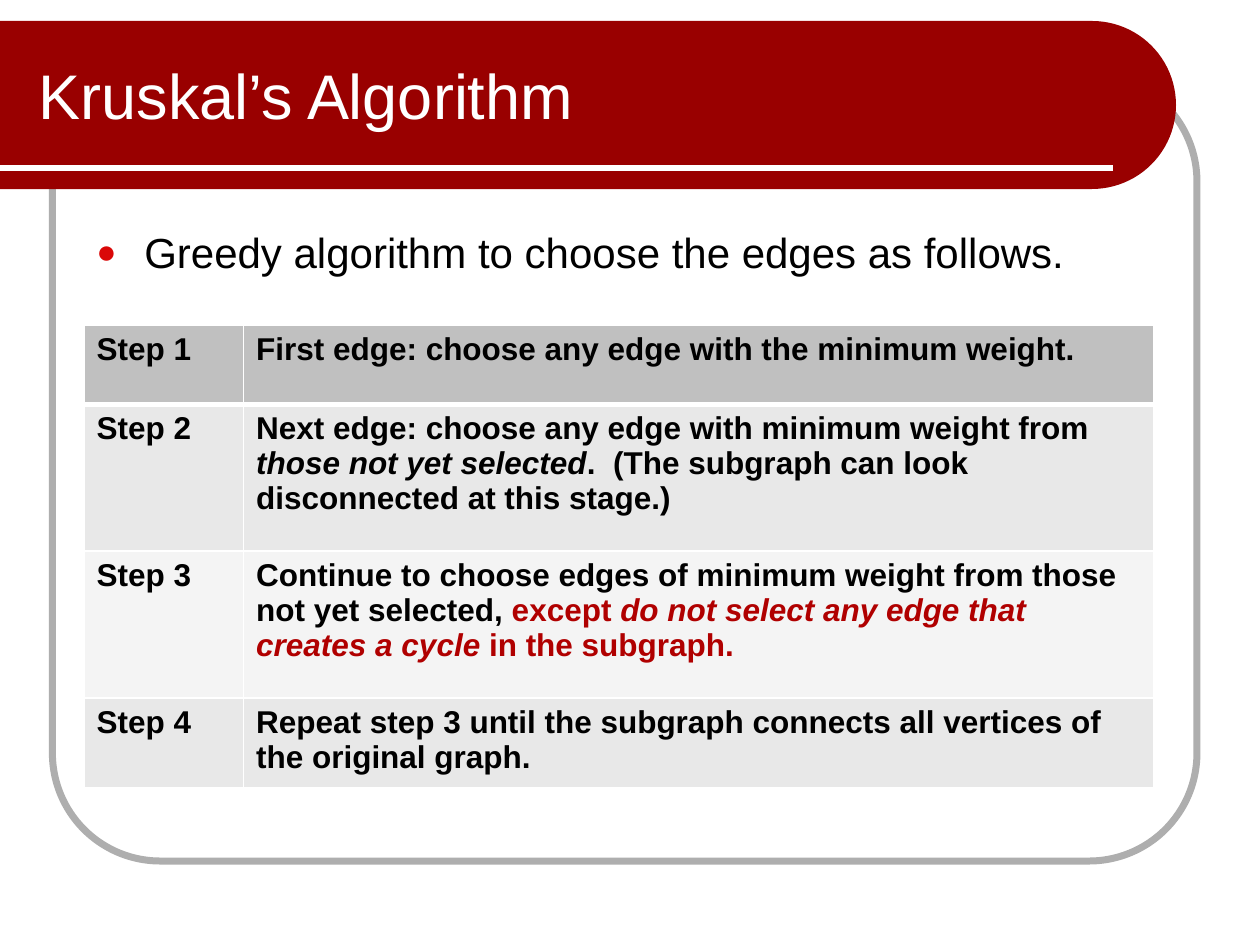
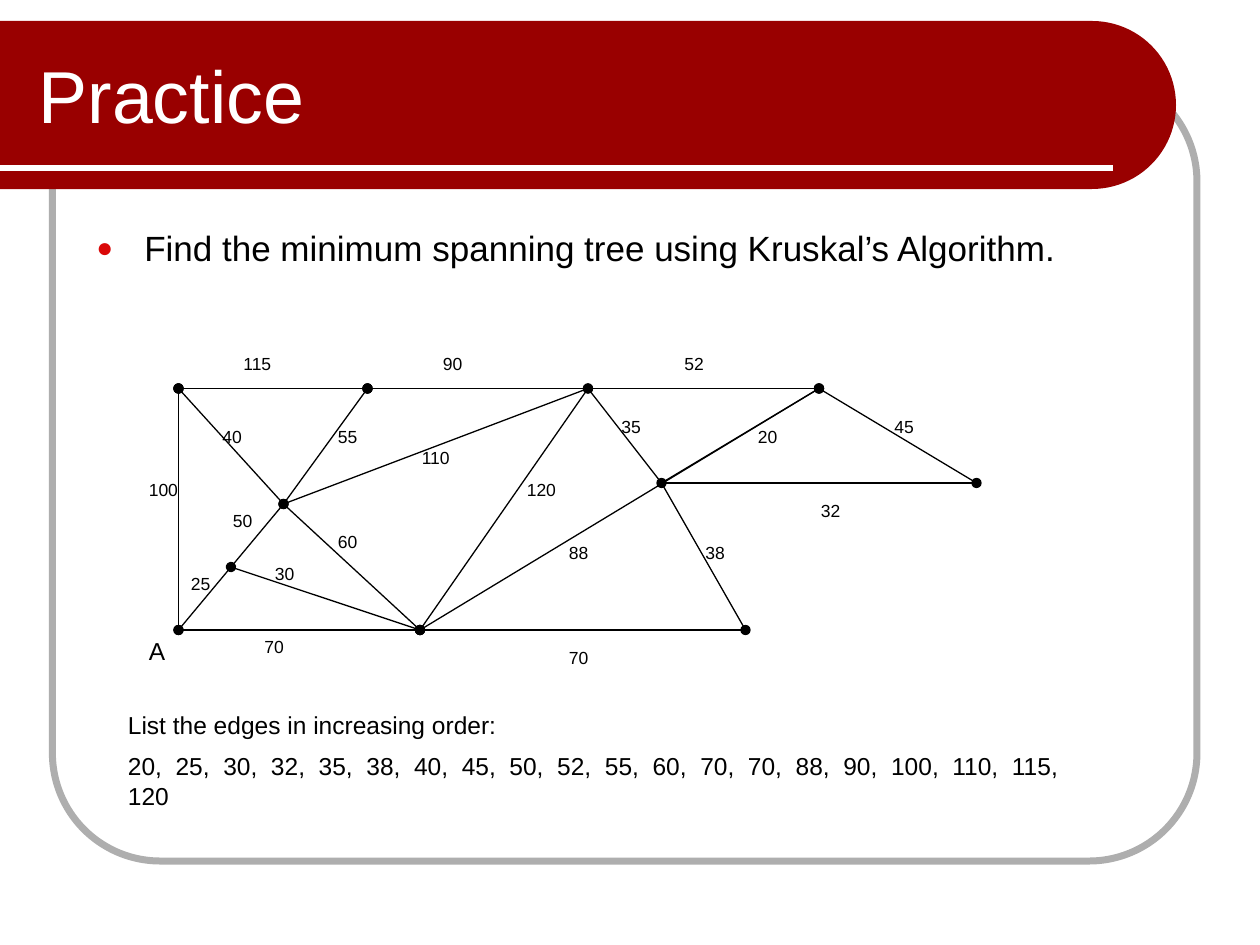
from math import cos, pi, sin

from lxml import etree
from pptx import Presentation
from pptx.dml.color import RGBColor
from pptx.enum.shapes import MSO_CONNECTOR, MSO_SHAPE
from pptx.enum.text import MSO_ANCHOR
from pptx.oxml.ns import qn
from pptx.util import Inches, Pt

STRAIGHT = MSO_CONNECTOR.STRAIGHT
ROUNDED = MSO_SHAPE.ROUNDED_RECTANGLE
MIDDLE, TOP = MSO_ANCHOR.MIDDLE, MSO_ANCHOR.TOP

FONT = "Arial"
COLORS = {
    "band": "990000", "frame": "AEAEAE", "bullet": "DA0808",
    "warning": "B00000", "ink": "000000", "paper": "FFFFFF",
    "first_row": "C0C0C0", "even_row": "E8E8E8", "odd_row": "F4F4F4",
}

# The slide is a grid of 120 columns by 90 rows; boxes are (left, top, width, height)
COLUMNS, ROWS = 120, 90
CELL = Inches(10) // COLUMNS
SLIDE_BOX = (0, 0, COLUMNS, ROWS)
TITLE_BOX = (2.5, 3, 93.5, 12)
BODY_BOX = (8, 21, 104, 58)
STEPS_BOX = (8, 31, 101.9, 44)
GRAPH_BOX = (13, 33, 80, 32)
ORDER_BOX = (11, 67, 92, 8.2)

# Each step is a list of (text, italic, colour)
STEPS = [
    [("First edge: choose any edge with the minimum weight.", False, "ink")],
    [("Next edge: choose any edge with minimum weight from ", False, "ink"),
     ("those not yet selected", True, "ink"),
     (".  (The subgraph can look disconnected at this stage.)", False, "ink")],
    [("Continue to choose edges of minimum weight from those not yet selected, ",
      False, "ink"),
     ("except ", False, "warning"),
     ("do not select any edge that creates a cycle", True, "warning"),
     (" in the subgraph.", False, "warning")],
    [("Repeat step 3 until the subgraph connects all vertices of the original graph.",
      False, "ink")],
]
STEP_FILLS = ["first_row", "even_row", "odd_row", "even_row"]
STEP_ROWS = [7.5, 14, 14, 8.5]
STEP_COLUMNS = [15.2, 86.7]

# Vertices within the graph box
VERTICES = {
    "A": (4, 27), "B": (4, 4), "C": (22, 4), "D": (43, 4), "E": (65, 4),
    "F": (80, 13), "G": (14, 15), "H": (9, 21), "I": (27, 27),
    "J": (50, 13), "K": (58, 27),
}
# Edge, weight, place and width of the weight, dots at the ends
EDGES = [
    ("AB", 100, (0, 12, 6), True), ("BC", 115, (9, 0, 6), True),
    ("CD", 90, (28, 0, 7), True), ("DE", 52, (51, 0, 7), True),
    ("EF", 45, (71, 6, 5), True), ("GB", 40, (7, 7, 5), True),
    ("GC", 55, (18, 7, 5), True), ("GD", 110, (26, 9, 6.7), False),
    ("AI", 70, (11, 27, 5), True), ("IK", 70, (40, 28, 5), True),
    ("GI", 60, (18, 17, 5), False), ("IH", 30, (12, 20, 5), True),
    ("DI", 120, (36, 12, 7), False), ("EI", 88, (40, 18, 5), False),
    ("EJ", 20, (58, 7, 5), True), ("DJ", 35, (45, 6, 5), False),
    ("JF", 32, (64, 14, 5), False), ("JK", 38, (53, 18, 5), False),
    ("AH", 25, (4, 21, 5), False), ("HG", 50, (8, 15, 5), False),
]


def grid(*cells):
    return [round(cell * CELL) for cell in cells]


def within(box, left, top, *size):
    return (box[0] + left, box[1] + top, *size)


def rgb(color):
    return RGBColor.from_string(COLORS[color])


def style(run, size, color="ink", bold=False, italic=False):
    run.font.name, run.font.size = FONT, Pt(size)
    run.font.color.rgb = rgb(color)
    run.font.bold, run.font.italic = bold, italic


def add_text(slide, box, lines, size, color="ink", anchor=TOP, gap=0):
    frame = slide.shapes.add_textbox(*grid(*box)).text_frame
    frame.word_wrap, frame.vertical_anchor = True, anchor
    frame.text = lines
    for order, paragraph in enumerate(frame.paragraphs):
        paragraph.space_before = Pt(gap if order else 0)
        for run in paragraph.runs:
            style(run, size, color)
    return frame


def add_line(slide, start, end, color, width, dots=False):
    line = slide.shapes.add_connector(STRAIGHT, *grid(*start, *end))
    line.line.color.rgb, line.line.width = rgb(color), Pt(width)
    properties = line._element.spPr
    if dots:
        outline = properties.find(qn("a:ln"))
        for tip in ("a:headEnd", "a:tailEnd"):
            etree.SubElement(outline, qn(tip), type="oval")
    etree.SubElement(properties, qn("a:effectLst"))


def add_backdrop(slide, box):
    # Rounded frame
    frame = slide.shapes.add_shape(ROUNDED, *grid(*within(box, 5, 7, 109, 75)))
    frame.adjustments[0] = 0.137
    frame.shadow.inherit = False
    frame.fill.background()
    frame.line.color.rgb, frame.line.width = rgb("frame"), Pt(4)

    # Title band with a half-round right end
    radius, arc_steps = 8, 48
    center_x, center_y = within(box, 104, 10)
    angles = [pi * (step / arc_steps - 0.5) for step in range(arc_steps + 1)]
    outline = [grid(center_x + radius * cos(angle), center_y + radius * sin(angle))
               for angle in angles]
    outline.append(grid(box[0], center_y + radius))
    pen = slide.shapes.build_freeform(*grid(box[0], center_y - radius))
    pen.add_line_segments(outline, close=True)
    band = pen.convert_to_shape()
    band.shadow.inherit = False
    band.fill.solid()
    band.fill.fore_color.rgb = rgb("band")
    band.line.fill.background()

    # Rule under the title
    add_line(slide, within(box, 0, 16), within(box, 106, 16), "paper", 3)


def add_bullet(slide, box, text, size):
    frame = add_text(slide, box, text, size)
    properties = frame.paragraphs[0]._p.get_or_add_pPr()
    properties.set("marL", str(Inches(0.38)))
    properties.set("indent", str(-Inches(0.38)))
    bullet_color = etree.SubElement(properties, qn("a:buClr"))
    etree.SubElement(bullet_color, qn("a:srgbClr"), val=COLORS["bullet"])
    etree.SubElement(properties, qn("a:buSzPct"), val="80000")
    etree.SubElement(properties, qn("a:buFont"), typeface=FONT)
    etree.SubElement(properties, qn("a:buChar"), char="●")


def start_slide(deck, title, title_size, task, task_size):
    slide = deck.slides.add_slide(deck.slide_layouts[6])
    add_backdrop(slide, SLIDE_BOX)
    add_text(slide, TITLE_BOX, title, title_size, "paper", MIDDLE)
    add_bullet(slide, BODY_BOX, task, task_size)
    return slide


def set_borders(cell, **widths):
    properties = cell._tc.get_or_add_tcPr()
    for side in "LRTB":
        border = etree.SubElement(properties, qn(f"a:ln{side}"),
                                  w=str(Pt(widths.get(side, 1))))
        fill = etree.SubElement(border, qn("a:solidFill"))
        etree.SubElement(fill, qn("a:srgbClr"), val=COLORS["paper"])


def add_steps(slide, box):
    table = slide.shapes.add_table(len(STEPS), 2, *grid(*box)).table
    for column, width in zip(table.columns, grid(*STEP_COLUMNS)):
        column.width = width
    for row, height in zip(table.rows, grid(*STEP_ROWS)):
        row.height = height
    for index, step in enumerate(STEPS):
        name = [(f"Step {index + 1}", False, "ink")]
        for cell, parts in zip(table.rows[index].cells, (name, step)):
            # The first row is set off by a thicker rule
            set_borders(cell, B=3 if index == 0 else 1, T=3 if index == 1 else 1)
            cell.fill.solid()
            cell.fill.fore_color.rgb = rgb(STEP_FILLS[index])
            paragraph = cell.text_frame.paragraphs[0]
            for text, italic, color in parts:
                run = paragraph.add_run()
                run.text = text
                style(run, 18, color, bold=True, italic=italic)


def add_graph(slide, box):
    # Edges and vertices
    for (start, end), _, _, dots in EDGES:
        add_line(slide, within(box, *VERTICES[start]), within(box, *VERTICES[end]),
                 "ink", 0.75, dots)
    # Weights
    for _, weight, place, _ in EDGES:
        add_text(slide, within(box, *place, 3.2), str(weight), 10)
    # Starting vertex
    add_text(slide, within(box, 0, 27, 6, 4), "A", 14)


def add_edge_order(slide, box):
    weights = sorted(weight for _, weight, _, _ in EDGES)
    ordered = ",  ".join(str(weight) for weight in weights)
    add_text(slide, box, f"List the edges in increasing order:\n{ordered}", 14, gap=7)


def main():
    deck = Presentation()
    deck.slide_width, deck.slide_height = grid(COLUMNS, ROWS)

    algorithm = start_slide(deck, "Kruskal’s Algorithm", 36,
                            "Greedy algorithm to choose the edges as follows.", 24)
    add_steps(algorithm, STEPS_BOX)

    practice = start_slide(
        deck, "Practice", 42,
        "Find the minimum spanning tree using Kruskal’s Algorithm.", 20)
    add_graph(practice, GRAPH_BOX)
    add_edge_order(practice, ORDER_BOX)

    deck.save("out.pptx")


if __name__ == "__main__":
    main()
